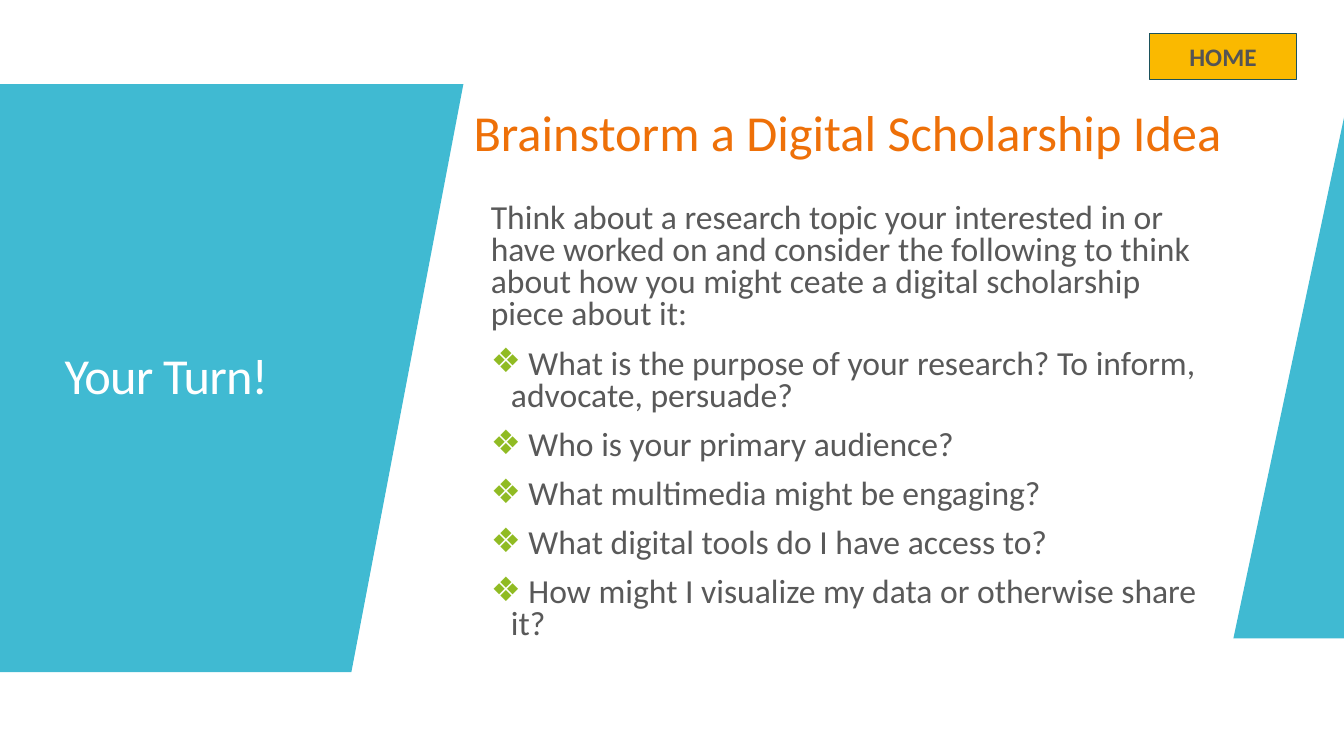
from lxml.etree import SubElement
from pptx import Presentation
from pptx.dml.color import RGBColor
from pptx.enum.shapes import MSO_SHAPE as Preset
from pptx.enum.text import MSO_ANCHOR as Anchor, MSO_AUTO_SIZE as AutoSize, PP_ALIGN as Align
from pptx.oxml.ns import qn
from pptx.util import Pt

TEAL = RGBColor(0x40, 0xBA, 0xD2)
AMBER = RGBColor(0xFA, 0xB9, 0x00)
DARK_TEAL = RGBColor(0x1C, 0x52, 0x5C)
ORANGE = RGBColor(0xEE, 0x70, 0x08)
GREEN = RGBColor(0x90, 0xBB, 0x23)
GREY = RGBColor(0x59, 0x59, 0x59)
BUTTON_GREY = RGBColor(0x54, 0x54, 0x54)
WHITE = RGBColor(0xFF, 0xFF, 0xFF)

FONT = "Calibri"
INTRO = ("Think about a research topic your interested in or have worked on and consider "
         "the following to think about how you might ceate a digital scholarship piece about it:")
QUESTIONS = [
    " What is the purpose of your research? To inform, advocate, persuade?",
    " Who is your primary audience?",
    " What multimedia might be engaging?",
    " What digital tools do I have access to?",
    " How might I visualize my data or otherwise share it?",
]


def place(part, left, top, width, height):
    part.left, part.top, part.width, part.height = Pt(left), Pt(top), Pt(width), Pt(height)


def style(paragraph, size, color, bold=False):
    font = paragraph.font
    font.name, font.size, font.bold = FONT, Pt(size), bold
    font.color.rgb = color


def set_bullet(paragraph, char=None, indent=0.0):
    """Give the paragraph a green hanging bullet, or none at all."""
    props = paragraph._p.get_or_add_pPr()
    props.set("marL", str(Pt(indent)))
    props.set("indent", str(-Pt(indent)))
    if char is None:
        SubElement(props, qn("a:buNone"))
        return
    color = SubElement(props, qn("a:buClr"))
    SubElement(color, qn("a:srgbClr")).set("val", str(GREEN))
    SubElement(props, qn("a:buFont")).set("typeface", FONT)
    SubElement(props, qn("a:buChar")).set("char", char)


def add_panel(slide, corners):
    """Draw a teal panel behind everything already on the slide."""
    builder = slide.shapes.build_freeform(*corners[0], scale=Pt(1))
    builder.add_line_segments(corners[1:], close=True)
    panel = builder.convert_to_shape()
    panel.shadow.inherit = False
    panel.fill.solid()
    panel.fill.fore_color.rgb = TEAL
    panel.line.fill.background()
    panel.element.getparent().insert(2, panel.element)


def add_left_panel(slide, left, top, width, height):
    bottom, slant = top + height, 80
    add_panel(slide, [(left, top), (left + width, top),
                      (left + width - slant, bottom), (left, bottom)])

    title = slide.shapes.title
    place(title, left + 38.9, top + 72.5, 218.2, 275)
    frame = title.text_frame
    frame.auto_size = AutoSize.NONE
    frame.vertical_anchor = Anchor.MIDDLE
    heading = frame.paragraphs[0]
    heading.alignment = Align.LEFT
    heading.line_spacing = 0.9
    run = heading.add_run()
    run.text = "Your Turn!"
    run._r.get_or_add_rPr().set("spc", "-60")
    style(heading, 36, WHITE)


def add_right_panel(slide, left, top, width, height):
    bottom, right = top + height, left + width
    add_panel(slide, [(right, top), (right, bottom), (left, bottom)])


def add_home_button(slide, left, top, width, height):
    button = slide.shapes.add_shape(Preset.RECTANGLE, Pt(left), Pt(top), Pt(width), Pt(height))
    button.shadow.inherit = False
    button.fill.solid()
    button.fill.fore_color.rgb = AMBER
    button.line.color.rgb = DARK_TEAL
    button.line.width = Pt(0.85)
    button.text_frame.vertical_anchor = Anchor.MIDDLE
    label = button.text_frame.paragraphs[0]
    label.text = "HOME"
    label.alignment = Align.CENTER
    style(label, 18, BUTTON_GREY, bold=True)


def add_prompt(slide, left, top, width, height):
    # Heading
    heading_box = slide.shapes.add_textbox(Pt(left), Pt(top), Pt(567.4), Pt(51))
    heading_box.text_frame.word_wrap = False
    heading_box.text_frame.auto_size = AutoSize.SHAPE_TO_FIT_TEXT
    heading = heading_box.text_frame.paragraphs[0]
    heading.text = "Brainstorm a Digital Scholarship Idea"
    style(heading, 36, ORANGE)

    # Introduction and questions
    body = slide.placeholders[1]
    place(body, left + 12.2, top + 64, width - 12.2, height - 64)
    frame = body.text_frame
    frame.auto_size = AutoSize.NONE
    frame.vertical_anchor = Anchor.MIDDLE
    for number, text in enumerate([INTRO] + QUESTIONS):
        paragraph = frame.add_paragraph() if number else frame.paragraphs[0]
        paragraph.text = text
        paragraph.line_spacing = 0.8
        paragraph.space_before = Pt(12 if number else 0)
        if number:
            set_bullet(paragraph, "❖", 14.4)
        else:
            set_bullet(paragraph)
        style(paragraph, 24, GREY)


def main():
    deck = Presentation()
    deck.slide_width, deck.slide_height = Pt(960), Pt(540)
    slide = deck.slides.add_slide(deck.slide_layouts[1])
    add_left_panel(slide, 0, 60, 331.2, 420)
    add_right_panel(slide, 881.3, 83.5, 78.7, 373)
    add_home_button(slide, 821.3, 24.2, 104.5, 32.4)
    add_prompt(slide, 331.2, 68.4, 534.2, 403.2)
    deck.save("out.pptx")


if __name__ == "__main__":
    main()
